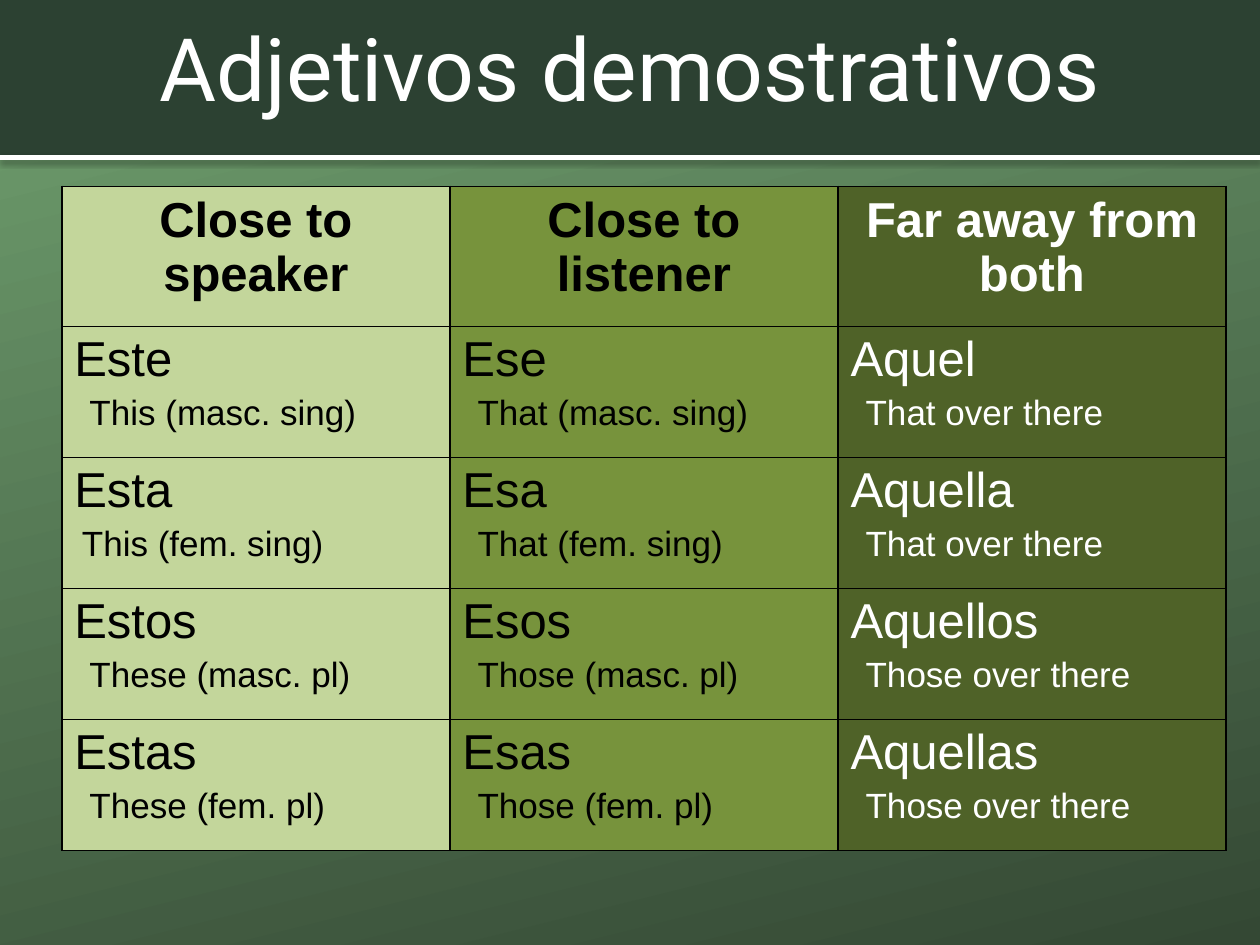
from dataclasses import dataclass

from lxml import etree
from pptx import Presentation
from pptx.dml.color import RGBColor
from pptx.enum.shapes import MSO_CONNECTOR, MSO_SHAPE
from pptx.enum.text import MSO_ANCHOR, MSO_AUTO_SIZE, PP_ALIGN
from pptx.oxml.ns import qn
from pptx.util import Inches, Pt

LEFT = PP_ALIGN.LEFT
CENTER = PP_ALIGN.CENTER
MIDDLE = MSO_ANCHOR.MIDDLE
NO_AUTOFIT = MSO_AUTO_SIZE.NONE
RECTANGLE = MSO_SHAPE.RECTANGLE
STRAIGHT = MSO_CONNECTOR.STRAIGHT
TITLE_ONLY = 5

HEADING = {"name": "Arial", "size": Pt(28), "bold": True}
WORD = {"name": "Arial", "size": Pt(28), "bold": False}
MEANING = {"name": "Arial", "size": Pt(20), "bold": False}
TITLE = {"name": "Roboto", "size": Pt(50), "bold": False}

MEANING_INDENT = 0.12
HEADER_HEIGHT = 1.11
ROW_HEIGHT = 1.04
COLUMN_WIDTH = 3.08


@dataclass
class Entry:
    word: str
    meaning: str
    indent: float = MEANING_INDENT


@dataclass
class Column:
    heading: str
    fill: str
    color: str
    entries: list[Entry]


COLUMNS = [
    Column("Close to speaker", "C3D69B", "000000", [
        Entry("Este", "This (masc. sing)"),
        Entry("Esta", "This (fem. sing)", MEANING_INDENT / 2),
        Entry("Estos", "These (masc. pl)"),
        Entry("Estas", "These (fem. pl)"),
    ]),
    Column("Close to listener", "77933C", "000000", [
        Entry("Ese", "That (masc. sing)"),
        Entry("Esa", "That (fem. sing)"),
        Entry("Esos", "Those (masc. pl)"),
        Entry("Esas", "Those (fem. pl)"),
    ]),
    Column("Far away from both", "4F6228", "FFFFFF", [
        Entry("Aquel", "That over there"),
        Entry("Aquella", "That over there"),
        Entry("Aquellos", "Those over there"),
        Entry("Aquellas", "Those over there"),
    ]),
]


def rgb(value: str) -> RGBColor:
    return RGBColor.from_string(value)


def add_color(parent, value: str):
    return etree.SubElement(parent, qn("a:srgbClr"), val=value)


def write(paragraph, text: str, font_format: dict, color: str, alignment) -> None:
    run = paragraph.add_run()
    run.text = text
    for name, value in font_format.items():
        setattr(run.font, name, value)
    run.font.color.rgb = rgb(color)
    paragraph.alignment = alignment


def paint_background(slide) -> None:
    fill = slide.background.fill
    fill.gradient()
    fill.gradient_angle = 360 - 76
    for stop, color in zip(fill.gradient_stops, ("70A06F", "344834")):
        stop.color.rgb = rgb(color)


def add_band(slide):
    band = slide.shapes.add_shape(RECTANGLE, 0, 0, Inches(10), Inches(1.25))
    band.shadow.inherit = False
    band.fill.solid()
    band.fill.fore_color.rgb = rgb("2C4132")
    band.line.fill.background()
    return band


def add_rule(slide):
    rule = slide.shapes.add_connector(STRAIGHT, 0, Inches(1.25), Inches(10), Inches(1.25))
    rule.line.color.rgb = rgb("FFFFFF")
    rule.line.width = Pt(3)
    effects = etree.SubElement(rule.element.spPr, qn("a:effectLst"))
    shadow = etree.SubElement(
        effects, qn("a:outerShdw"), blurRad=str(Pt(3.1)), dist=str(Pt(1.6)),
        dir="5400000", rotWithShape="0",
    )
    etree.SubElement(add_color(shadow, "000000"), qn("a:alpha"), val="38000")
    return rule


def place_title(slide, text: str) -> None:
    title = slide.shapes.title
    bounds = {"left": 0, "top": 0, "width": Inches(10), "height": Inches(1.06)}
    for name, value in bounds.items():
        setattr(title, name, value)
    frame = title.text_frame
    frame_format = {"word_wrap": True, "auto_size": NO_AUTOFIT, "vertical_anchor": MIDDLE}
    for name, value in frame_format.items():
        setattr(frame, name, value)
    write(frame.paragraphs[0], text, TITLE, "FFFFFF", CENTER)


def style_cell(cell, fill: str) -> None:
    properties = cell._tc.get_or_add_tcPr()
    for side in ("lnL", "lnR", "lnT", "lnB"):
        border = etree.SubElement(properties, qn(f"a:{side}"), w=str(Pt(1)))
        add_color(etree.SubElement(border, qn("a:solidFill")), "000000")
    cell.fill.solid()
    cell.fill.fore_color.rgb = rgb(fill)


def write_entry(cell, entry: Entry, color: str) -> None:
    write(cell.text_frame.paragraphs[0], entry.word, WORD, color, LEFT)
    paragraph = cell.text_frame.add_paragraph()
    write(paragraph, entry.meaning, MEANING, color, LEFT)
    paragraph.space_before = Pt(4)
    paragraph._p.get_or_add_pPr().set("marL", str(Inches(entry.indent)))


def add_adjective_table(slide, columns: list[Column]) -> None:
    entry_count = len(columns[0].entries)
    table = slide.shapes.add_table(
        entry_count + 1, len(columns), Inches(0.49), Inches(1.48),
        Inches(COLUMN_WIDTH * len(columns)),
        Inches(HEADER_HEIGHT + ROW_HEIGHT * entry_count),
    ).table
    table.first_row = False
    table.horz_banding = False
    for index, row in enumerate(table.rows):
        row.height = Inches(ROW_HEIGHT if index else HEADER_HEIGHT)
    for column_index, column in enumerate(columns):
        table.columns[column_index].width = Inches(COLUMN_WIDTH)
        for row_index in range(entry_count + 1):
            style_cell(table.cell(row_index, column_index), column.fill)
        header = table.cell(0, column_index).text_frame.paragraphs[0]
        write(header, column.heading, HEADING, column.color, CENTER)
        for row_index, entry in enumerate(column.entries, start=1):
            write_entry(table.cell(row_index, column_index), entry, column.color)


def main() -> None:
    presentation = Presentation()
    presentation.slide_width = Inches(10)
    presentation.slide_height = Inches(7.5)
    slide = presentation.slides.add_slide(presentation.slide_layouts[TITLE_ONLY])
    paint_background(slide)
    for shape in (add_band(slide), add_rule(slide)):
        slide.shapes.title.element.addprevious(shape.element)
    place_title(slide, "Adjetivos demostrativos")
    add_adjective_table(slide, COLUMNS)
    presentation.save("out.pptx")


if __name__ == "__main__":
    main()
